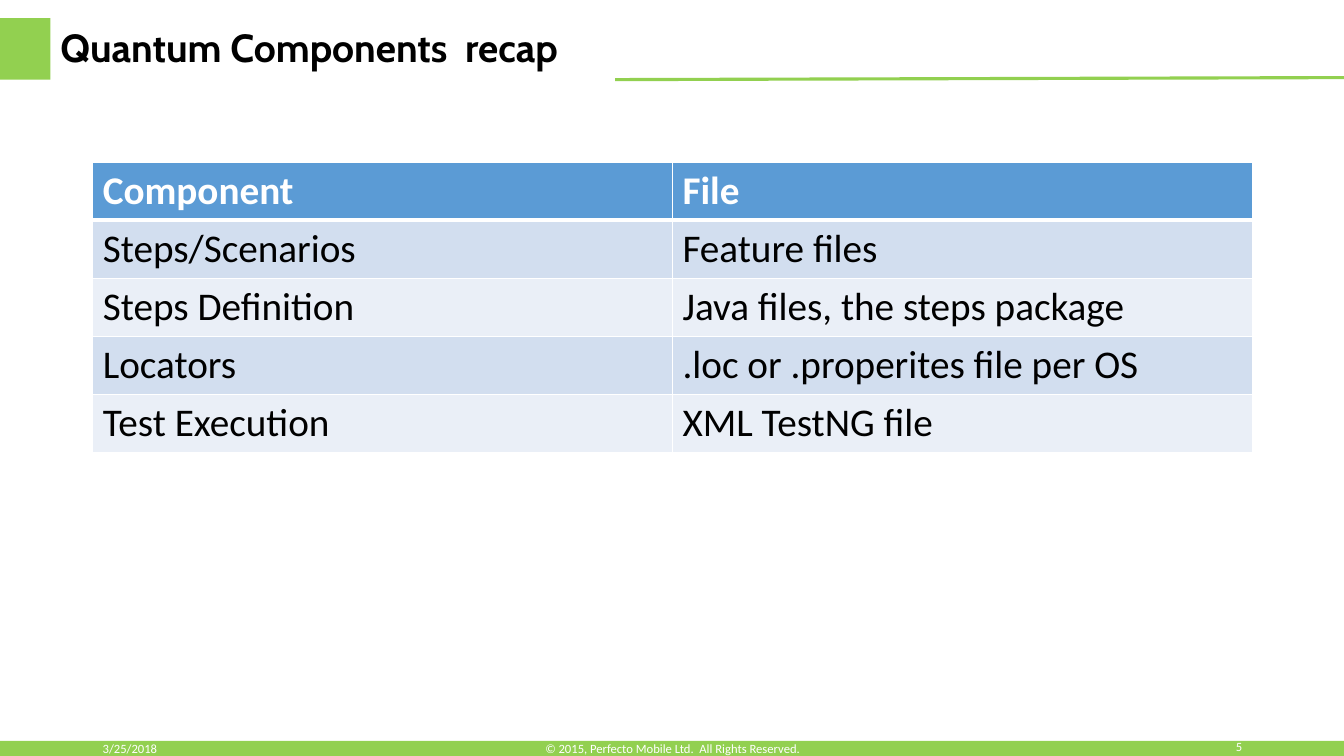
from lxml import etree
from pptx import Presentation, util as u
from pptx.dml.color import RGBColor
from pptx.enum import shapes, text
from pptx.oxml.ns import qn

WIDE, HIGH = 13.33, 7.5
GREEN = RGBColor(0x92, 0xD0, 0x50)
BLUE = RGBColor(0x5B, 0x9B, 0xD5)
BANDS = RGBColor(0xD2, 0xDE, 0xEF), RGBColor(0xEA, 0xEF, 0xF7)
WHITE = RGBColor(255, 255, 255)
BLACK = RGBColor(0, 0, 0)
ALIGN = text.PP_ALIGN

ROWS = [
    ("Component", "File"),
    ("Steps/Scenarios", "Feature files"),
    ("Steps Definition", "Java files, the steps package"),
    ("Locators", ".loc or .properites file per OS"),
    ("Test Execution", "XML TestNG file"),
]


def inch(*sizes):
    return [u.Inches(size) for size in sizes]


def write(frame, words, size, color, face="Calibri", bold=False, align=ALIGN.LEFT):
    """Put one run in the frame's first paragraph and return that paragraph."""
    para = frame.paragraphs[0]
    para.alignment = align
    run = para.add_run()
    run.text = words
    font = run.font
    font.name, font.size, font.bold = face, u.Pt(size), bold
    font.color.rgb = color
    return para


def bar(slide, box):
    shape = slide.shapes.add_shape(shapes.MSO_SHAPE.RECTANGLE, *inch(*box))
    shape.shadow.inherit = False
    shape.fill.solid()
    shape.fill.fore_color.rgb = GREEN
    shape.line.fill.background()


def header(slide, left, top, width, height):
    mark = 0.5
    bar(slide, (left, top + 0.12, mark, 0.61))

    rule = slide.shapes.add_connector(
        shapes.MSO_CONNECTOR.STRAIGHT,
        *inch(left + 6.1, top + 0.73, left + width, top + 0.71))
    rule.line.color.rgb = GREEN
    rule.line.width = u.Pt(2.25)
    etree.SubElement(rule._element.spPr, qn("a:effectLst"))

    title = slide.shapes.title
    title.left, title.top, title.width, title.height = inch(
        left + mark, top, 5.6, height)
    frame = title.text_frame
    frame.word_wrap = True
    frame.vertical_anchor = text.MSO_ANCHOR.MIDDLE
    para = write(frame, "Quantum Components  recap", 28, BLACK, "Cabin", True)
    para.line_spacing = 0.9


def border(cell, side, points):
    """Draw one white edge; call before the cell gets its fill."""
    props = cell._tc.get_or_add_tcPr()
    edge = etree.SubElement(props, qn("a:ln" + side), w=str(u.Pt(points)))
    fill = etree.SubElement(edge, qn("a:solidFill"))
    etree.SubElement(fill, qn("a:srgbClr"), val=str(WHITE))


def grid(slide, left, top, width, height):
    table = slide.shapes.add_table(
        len(ROWS), len(ROWS[0]), *inch(left, top, width, height)).table
    for r, row in enumerate(ROWS):
        head = r == 0
        for c, words in enumerate(row):
            cell = table.cell(r, c)
            for side in "LRTB":
                thick = head and side == "B" or r == 1 and side == "T"
                border(cell, side, 3 if thick else 1)
            cell.fill.solid()
            cell.fill.fore_color.rgb = BLUE if head else BANDS[(r - 1) % 2]
            write(cell.text_frame, words, 28, WHITE if head else BLACK, bold=head)


def footer(slide, left, top, width, height):
    bar(slide, (left, top, width, height))
    notes = [
        (0.92, 3, "3/25/2018", ALIGN.LEFT, 0.31),
        (4.42, 4.5, "© 2015, Perfecto Mobile Ltd.  All Rights Reserved.",
         ALIGN.CENTER, 0.31),
        (9.42, 3, "5", ALIGN.RIGHT, 0.27),
    ]
    for start, span, words, align, tall in notes:
        note = slide.shapes.add_textbox(
            *inch(left + start, top - 0.08, span, tall))
        frame = note.text_frame
        frame.word_wrap = True
        frame.vertical_anchor = text.MSO_ANCHOR.MIDDLE
        write(frame, words, 9, WHITE, align=align)


def main():
    deck = Presentation()
    deck.slide_width, deck.slide_height = inch(WIDE, HIGH)
    slide = deck.slides.add_slide(deck.slide_layouts[5])
    header(slide, 0, 0.06, WIDE, 0.87)
    grid(slide, 0.92, 1.61, 11.5, 2.87)
    footer(slide, 0, HIGH - 0.15, WIDE, 0.15)
    deck.save("out.pptx")


if __name__ == "__main__":
    main()
